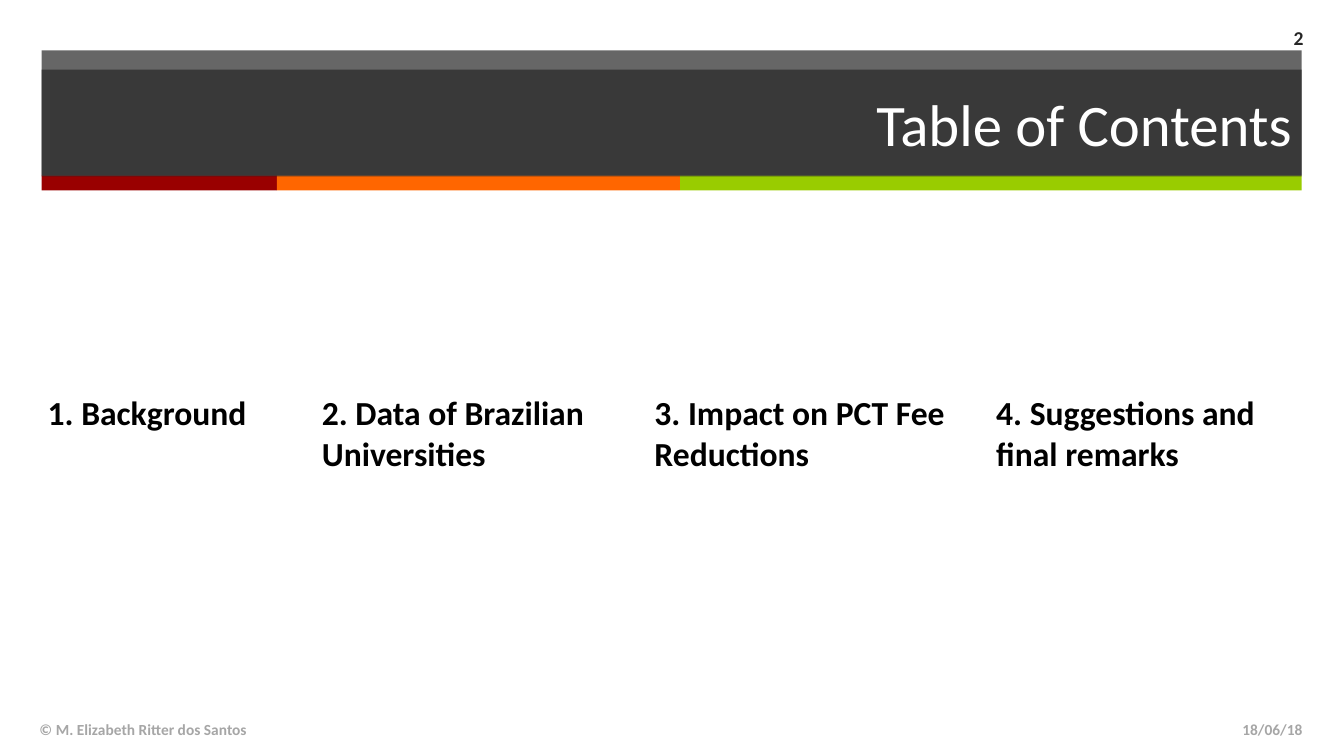
from dataclasses import dataclass

from lxml import etree
from pptx import Presentation
from pptx.dml.color import RGBColor
from pptx.enum.shapes import MSO_SHAPE
from pptx.enum.text import MSO_ANCHOR, PP_ALIGN
from pptx.oxml.ns import qn
from pptx.shapes.autoshape import Shape
from pptx.slide import Slide
from pptx.text.text import TextFrame
from pptx.util import Inches, Pt

RECT = MSO_SHAPE.RECTANGLE
MIDDLE, TOP = MSO_ANCHOR.MIDDLE, MSO_ANCHOR.TOP
LEFT, RIGHT = PP_ALIGN.LEFT, PP_ALIGN.RIGHT
WIDE, HIGH = Inches(13.333), Inches(7.5)


@dataclass(frozen=True)
class Theme:
    font: str = "Calibri"
    dark: str = "262626"
    white: str = "FFFFFF"
    black: str = "000000"
    muted: str = "A6A6A6"
    red: str = "990000"
    orange: str = "FF6600"
    green: str = "99CC00"
    alpha: int = 70
    title: int = 42
    body: int = 24
    page: int = 14
    foot: int = 11


THEME = Theme()


@dataclass(frozen=True)
class Box:
    """Place and size in percent of the slide's width and height."""
    x: float
    y: float
    w: float
    h: float

    def emu(self) -> tuple[int, int, int, int]:
        return (across(self.x), down(self.y), across(self.w), down(self.h))


@dataclass(frozen=True)
class Stripe:
    width: float
    color: str


@dataclass(frozen=True)
class Topic:
    text: str
    width: float


@dataclass(frozen=True)
class Label:
    text: str
    box: Box
    size: int
    color: str
    align: PP_ALIGN


BAND = Box(3.1, 6.67, 93.75, 16.53)
TITLE = Box(3.1, 9.2, 93.75, 14.13)
STRIPE_TOP, STRIPE_HIGH = 23.2, 2
STRIPES = [
    Stripe(17.5, THEME.red),
    Stripe(30, THEME.orange),
    Stripe(46.25, THEME.green),
]
TABLE = Box(2.8, 29.6, 94.13, 59.73)
TEXT_DROP = 22.4
TOPICS = [
    Topic("1. Background", 20.4),
    Topic("2. Data of Brazilian Universities", 24.75),
    Topic("3. Impact on PCT Fee Reductions", 25.43),
    Topic("4. Suggestions and final remarks", 23.55),
]
LABELS = [
    Label("18/06/18", Box(74.33, 93.87, 23.33, 5.33),
          THEME.foot, THEME.muted, RIGHT),
    Label("© M. Elizabeth Ritter dos Santos", Box(2.2, 93.87, 67, 5.33),
          THEME.foot, THEME.muted, LEFT),
    Label("2", Box(90.83, 2.4, 6.9, 5.2), THEME.page, THEME.dark, RIGHT),
]


def across(share: float) -> int:
    return round(WIDE * share / 100)


def down(share: float) -> int:
    return round(HIGH * share / 100)


def write(frame: TextFrame, text: str, size: int, color: str,
          align: PP_ALIGN = LEFT, bold: bool = True) -> None:
    frame.text = text
    frame.word_wrap = True
    line = frame.paragraphs[0]
    line.alignment = align
    font = line.runs[0].font
    font.name, font.size, font.bold = THEME.font, Pt(size), bold
    font.color.rgb = RGBColor.from_string(color)


def block(slide: Slide, box: Box, color: str, alpha: int = 100) -> Shape:
    shape = slide.shapes.add_shape(RECT, *box.emu())
    shape.shadow.inherit = False
    shape.line.fill.background()
    shape.fill.solid()
    shape.fill.fore_color.rgb = RGBColor.from_string(color)
    if alpha < 100:
        tint = shape.fill._xPr.find(f".//{qn('a:srgbClr')}")
        etree.SubElement(tint, qn("a:alpha"), val=str(alpha * 1000))
    return shape


def header(slide: Slide) -> None:
    block(slide, BAND, THEME.dark, THEME.alpha)
    left = BAND.x
    for item in STRIPES:
        box = Box(left, STRIPE_TOP, item.width, STRIPE_HIGH)
        block(slide, box, item.color)
        left += item.width
    frame = block(slide, TITLE, THEME.dark, THEME.alpha).text_frame
    write(frame, "Table of Contents", THEME.title, THEME.white, RIGHT, False)
    frame.vertical_anchor = MIDDLE


def topics(slide: Slide) -> None:
    table = slide.shapes.add_table(1, len(TOPICS), *TABLE.emu()).table
    table.rows[0].height = down(TABLE.h)
    for col, cell, topic in zip(table.columns, table.rows[0].cells, TOPICS):
        col.width = across(topic.width)
        cell.fill.background()
        cell.vertical_anchor = TOP
        cell.margin_top = down(TEXT_DROP)
        write(cell.text_frame, topic.text, THEME.body, THEME.black)


def label(slide: Slide, item: Label) -> None:
    frame = slide.shapes.add_textbox(*item.box.emu()).text_frame
    write(frame, item.text, item.size, item.color, item.align)
    frame.vertical_anchor = MIDDLE


def main() -> None:
    deck = Presentation()
    deck.slide_width, deck.slide_height = WIDE, HIGH
    slide = deck.slides.add_slide(deck.slide_layouts[6])
    # Title band with its coloured stripes
    header(slide)
    # Contents, one column per topic
    topics(slide)
    # Date, author and page number
    for item in LABELS:
        label(slide, item)
    deck.save("out.pptx")


if __name__ == "__main__":
    main()
